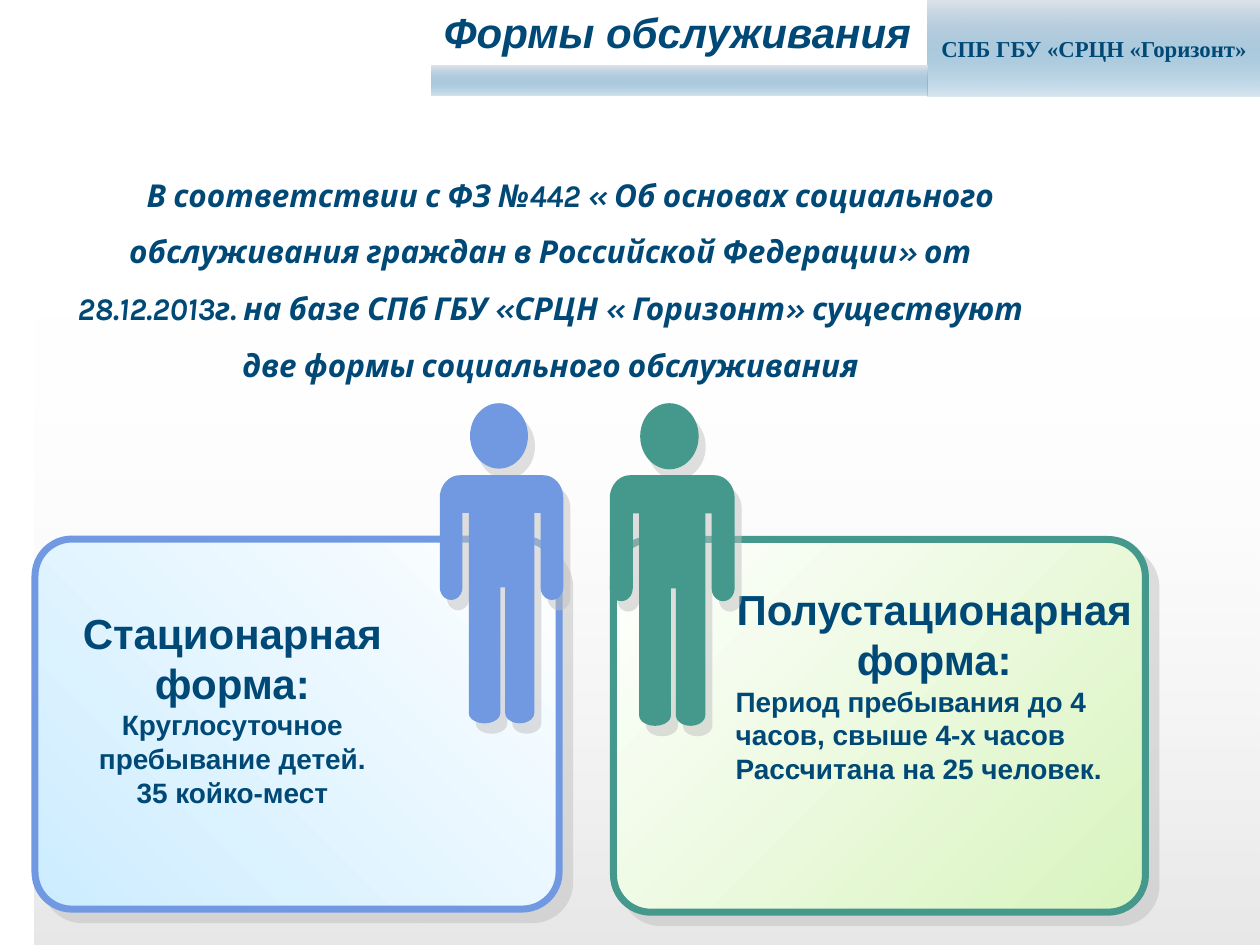
from math import cos, radians, sin

from lxml.etree import SubElement
from pptx import Presentation
from pptx.dml.color import RGBColor
from pptx.enum.shapes import MSO_SHAPE
from pptx.enum.text import MSO_ANCHOR, MSO_AUTO_SIZE, PP_ALIGN
from pptx.oxml.ns import qn
from pptx.util import Pt

COLORS = {
    "text": "004976", "blue": "7099E2", "green": "44988C",
    "sky": "CCECFF", "lime": "D8F4BE", "white": "FFFFFF", "black": "000000",
    "header_light": "DFE3EA", "header_dark": "00629E", "shadow": "C0C0C0",
}


def rgb(name):
    return RGBColor.from_string(COLORS[name])


def write_text(shape, lines, font="Arial", italic=False, wrap=True,
               anchor=MSO_ANCHOR.TOP, spacing=None, indent=0):
    """Fill a shape with (text, size, alignment) lines in bold."""
    frame = shape.text_frame
    frame.word_wrap = wrap
    frame.auto_size = MSO_AUTO_SIZE.NONE
    frame.vertical_anchor = anchor
    for index, (text, size, alignment) in enumerate(lines):
        paragraph = frame.add_paragraph() if index else frame.paragraphs[0]
        paragraph.alignment = alignment
        paragraph.line_spacing = spacing
        if indent:
            properties = paragraph._p.get_or_add_pPr()
            properties.set("marL", "0")
            properties.set("indent", str(Pt(indent)))
        run = paragraph.add_run()
        run.text = text
        run.font.name, run.font.size = font, Pt(size)
        run.font.bold, run.font.italic = True, italic
        run.font.color.rgb = rgb("text")


def add_text_box(slide, box, lines, **text_format):
    shape = slide.shapes.add_textbox(*map(Pt, box))
    write_text(shape, lines, **text_format)


def set_shadow(shape, distance, angle):
    shape.shadow.inherit = False
    effects = shape._element.spPr.find(qn("a:effectLst"))
    shadow = SubElement(effects, qn("a:outerShdw"), dist=str(Pt(distance)),
                        dir=str(angle * 60000), algn="ctr", rotWithShape="0")
    color = SubElement(shadow, qn("a:srgbClr"), val=COLORS["shadow"])
    SubElement(color, qn("a:alpha"), val="50000")


def add_gradient_shape(slide, kind, box, stops, angle):
    """Add a borderless shape; stops are two (colour, opacity percent) pairs."""
    shape = slide.shapes.add_shape(kind, *map(Pt, box))
    shape.shadow.inherit = False
    shape.line.fill.background()
    shape.fill.gradient()
    shape.fill.gradient_angle = angle
    for stop, (color, _) in zip(shape.fill.gradient_stops, stops):
        stop.color.rgb = rgb(color)
    gradient = shape._element.spPr.find(qn("a:gradFill"))
    for element, (_, opacity) in zip(gradient.iter(qn("a:srgbClr")), stops):
        if opacity < 100:
            SubElement(element, qn("a:alpha"), val=str(opacity * 1000))
    return shape


def add_card(slide, box, border, colors, angle):
    stops = [(color, 100) for color in colors]
    card = add_gradient_shape(slide, MSO_SHAPE.ROUNDED_RECTANGLE, box, stops, angle)
    card.adjustments[0] = 0.1
    card.line.color.rgb = rgb(border)
    card.line.width = Pt(4)
    set_shadow(card, 8.5, 45)


def arc(center_x, center_y, radius_x, radius_y, start, end, steps=10):
    angles = [radians(start + (end - start) * i / steps) for i in range(steps + 1)]
    return [(center_x + radius_x * cos(a), center_y + radius_y * sin(a)) for a in angles]


def limb_end(left, right, y, depth):
    return arc((left + right) / 2, y, (right - left) / 2, depth, 180, 0)


def body_outline():
    """Return the points of a standing body, 70.6 by 141.8 points."""
    width, armpit, crotch = 70.6, 21.6, 64.1
    return [
        *arc(11.5, 13, 11.5, 13, 270, 180),
        *limb_end(0, 13, crotch, 7.2), (13, armpit), (16.6, armpit),
        *limb_end(16.6, 34.6, 136, 5.8), (34.6, crotch), (37.4, crotch),
        *limb_end(37.4, 54, 136, 5.8), (54, armpit), (57.6, armpit),
        *limb_end(57.6, width, crotch, 7.2),
        *arc(width - 11.5, 13, 11.5, 13, 0, -90),
    ]


def add_person(slide, left, color, scale=1.0):
    head_top, body_top, precision = 230.4, 271.6, 100
    points = [(x * precision, y * precision) for x, y in body_outline()]
    head = slide.shapes.add_shape(MSO_SHAPE.OVAL, Pt(left + 17.3), Pt(head_top),
                                  Pt(33.1 * scale), Pt(37.4 * scale))
    builder = slide.shapes.build_freeform(*points[0], scale=Pt(scale) / precision)
    builder.add_line_segments(points[1:], close=True)
    body = builder.convert_to_shape(Pt(left), Pt(body_top))
    for part in (head, body):
        part.fill.solid()
        part.fill.fore_color.rgb = rgb(color)
        part.line.fill.background()
        set_shadow(part, 7.2, 56)


def add_title(slide):
    title = slide.shapes.title
    slide.shapes._spTree.append(title._element)
    title.left, title.top, title.width, title.height = map(Pt, (36.7, 111.6, 555.8, 85.7))
    text = ("В соответствии с ФЗ №442 « Об основах социального обслуживания "
            "граждан в Российской Федерации» от 28.12.2013г. на базе СПб ГБУ "
            "«СРЦН « Горизонт» существуют две формы социального обслуживания")
    write_text(title, [(text, 18, PP_ALIGN.CENTER)], font="Karla", italic=True,
               anchor=MSO_ANCHOR.MIDDLE, spacing=1.5, indent=23)


def add_header(slide):
    stops = [("header_light", 100), ("header_dark", 15)]
    label, _ = [add_gradient_shape(slide, MSO_SHAPE.RECTANGLE, box, stops, 270)
                for box in ((530, 0, 190, 54.9), (246.6, 37.4, 283.4, 17.5))]
    write_text(label, [("СПБ ГБУ «СРЦН «Горизонт»", 13, PP_ALIGN.CENTER)],
               font="Times New Roman", wrap=False, anchor=MSO_ANCHOR.MIDDLE)
    add_text_box(slide, (246.6, 0, 285, 36),
                 [("Формы обслуживания", 24, PP_ALIGN.LEFT)], italic=True, wrap=False)


def main():
    presentation = Presentation()
    presentation.slide_width, presentation.slide_height = Pt(720), Pt(540)
    slide = presentation.slides.add_slide(presentation.slide_layouts[5])

    add_gradient_shape(slide, MSO_SHAPE.RECTANGLE, (20, 159, 720.5, 381),
                       [("black", 10), ("white", 0)], 90)
    add_card(slide, (20, 308, 299.5, 211.5), "blue", ("sky", "white"), 45)
    add_person(slide, 251.3, "blue")
    add_title(slide)
    add_text_box(slide, (36.7, 343.4, 192.2, 143.3), [
        ("Стационарная форма:", 24, PP_ALIGN.CENTER),
        ("Круглосуточное пребывание детей.", 16, PP_ALIGN.CENTER),
        ("35 койко-мест", 16, PP_ALIGN.CENTER),
    ])

    add_card(slide, (350.6, 308.3, 304, 213), "green", ("white", "lime"), 315)
    add_text_box(slide, (413.3, 329.8, 241.2, 191.5), [
        ("Полустационарная форма:", 24, PP_ALIGN.CENTER),
        ("Период пребывания до 4 часов, свыше 4-х часов", 16, PP_ALIGN.LEFT),
        ("Рассчитана на 25 человек.", 16, PP_ALIGN.LEFT),
    ])
    add_person(slide, 348.5, "green", scale=1.01)
    add_header(slide)
    presentation.save("out.pptx")


if __name__ == "__main__":
    main()
